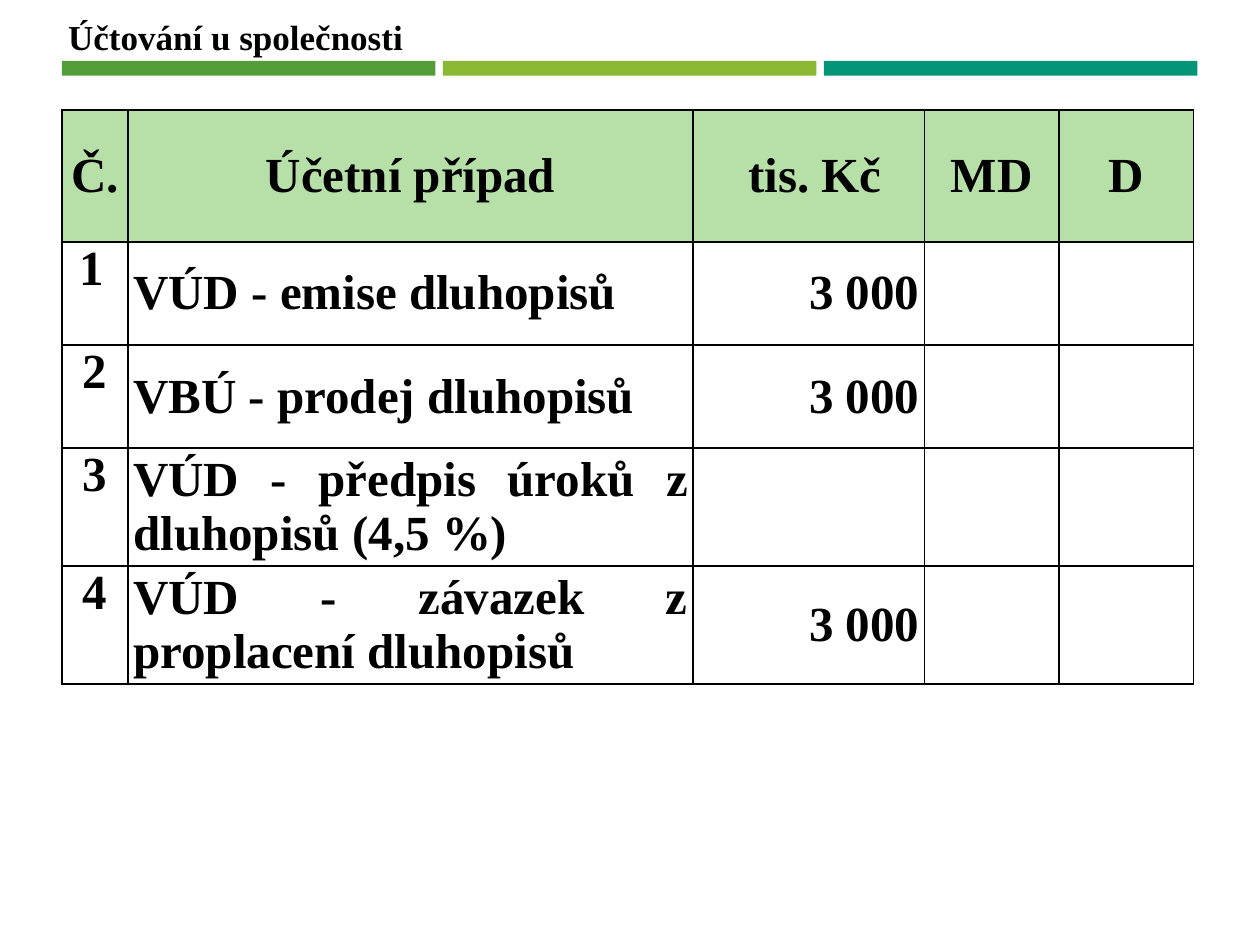
from lxml.etree import SubElement
from pptx import Presentation
from pptx.dml.color import RGBColor
from pptx.enum.shapes import MSO_SHAPE
from pptx.enum.text import MSO_ANCHOR, MSO_AUTO_SIZE, PP_ALIGN
from pptx.oxml.ns import qn
from pptx.util import Pt

BLACK = RGBColor(0x00, 0x00, 0x00)
GREEN = RGBColor(0x54, 0x9E, 0x39)
LIME = RGBColor(0x8A, 0xB8, 0x33)
TEAL = RGBColor(0x02, 0x96, 0x76)
HEADER = RGBColor(0xB7, 0xE0, 0xA8)

LEFT, CENTER, RIGHT, JUSTIFY = (
    PP_ALIGN.LEFT, PP_ALIGN.CENTER, PP_ALIGN.RIGHT, PP_ALIGN.JUSTIFY)


class SlideBuilder:
    font = "Times New Roman"
    title_size = 20
    table_size = 28
    inset = Pt(3)

    def __init__(self, prs):
        self.s = prs.slides.add_slide(prs.slide_layouts[5])

    def add_text(self, tf, text, size, align):
        p = tf.paragraphs[0]
        p.alignment = align
        r = p.add_run()
        r.text = text
        r.font.name = self.font
        r.font.size = Pt(size)
        r.font.bold = True
        r.font.color.rgb = BLACK

    def title(self, text, x, y, w, h):
        sp = self.s.shapes.title
        sp.left, sp.top, sp.width, sp.height = Pt(x), Pt(y), Pt(w), Pt(h)
        tf = sp.text_frame
        tf.word_wrap = False
        tf.auto_size = MSO_AUTO_SIZE.SHAPE_TO_FIT_TEXT
        tf.vertical_anchor = MSO_ANCHOR.TOP
        self.add_text(tf, text, self.title_size, LEFT)

    def bar(self, x, y, w, h, color):
        sp = self.s.shapes.add_shape(
            MSO_SHAPE.RECTANGLE, Pt(x), Pt(y), Pt(w), Pt(h))
        sp.shadow.inherit = False
        sp.fill.solid()
        sp.fill.fore_color.rgb = color
        sp.line.fill.background()

    def borders(self, cell):
        tc_pr = cell._tc.get_or_add_tcPr()
        for i, side in enumerate(("lnL", "lnR", "lnT", "lnB")):
            ln = SubElement(tc_pr, qn(f"a:{side}"), w=str(Pt(1)))
            fill = SubElement(ln, qn("a:solidFill"))
            SubElement(fill, qn("a:srgbClr"), val=str(BLACK))
            tc_pr.insert(i, ln)

    def table(self, x, y, widths, heights, rows, aligns):
        table = self.s.shapes.add_table(
            len(rows), len(widths), Pt(x), Pt(y),
            Pt(sum(widths)), Pt(sum(heights))).table
        for col, width in zip(table.columns, widths):
            col.width = Pt(width)
        for row, height in zip(table.rows, heights):
            row.height = Pt(height)
        for i, texts in enumerate(rows):
            for j, text in enumerate(texts):
                cell = table.cell(i, j)
                cell.margin_left = cell.margin_right = self.inset
                cell.margin_top = cell.margin_bottom = 0
                # Row numbers sit at the top, everything else in the middle
                number = i > 0 and j == 0
                cell.vertical_anchor = MSO_ANCHOR.TOP if number else MSO_ANCHOR.MIDDLE
                if i == 0:
                    cell.fill.solid()
                    cell.fill.fore_color.rgb = HEADER
                else:
                    cell.fill.background()
                self.borders(cell)
                if text:
                    align = CENTER if i == 0 else aligns[j]
                    self.add_text(cell.text_frame, text, self.table_size, align)
        # The first number is set from the left
        table.cell(1, 0).text_frame.paragraphs[0].alignment = LEFT


def main():
    prs = Presentation()
    prs.slide_width, prs.slide_height = Pt(720), Pt(540)
    slide = SlideBuilder(prs)

    # Coloured bars under the title
    for i, color in enumerate((GREEN, LIME, TEAL)):
        slide.bar(35.4 + i * 217.7, 34.8, 213.5, 8.4, color)

    slide.title("Účtování u společnosti", 31.7, 5, 207.4, 31.7)

    # Accounting entries
    rows = [
        ("Č.", "Účetní případ", " tis. Kč", "MD", "D"),
        (" 1", "VÚD - emise dluhopisů", "3 000", "", ""),
        ("2", "VBÚ - prodej dluhopisů", "3 000", "", ""),
        ("3", "VÚD - předpis úroků z dluhopisů (4,5 %)", "", "", ""),
        ("4", "VÚD - závazek z proplacení dluhopisů", "3 000", "", ""),
    ]
    slide.table(35.3, 62.8, (37.9, 322.8, 132.2, 77, 77),
                (75.4, 59, 59, 67.3, 67.3), rows,
                (CENTER, JUSTIFY, RIGHT, CENTER, CENTER))

    prs.save("out.pptx")


if __name__ == "__main__":
    main()
